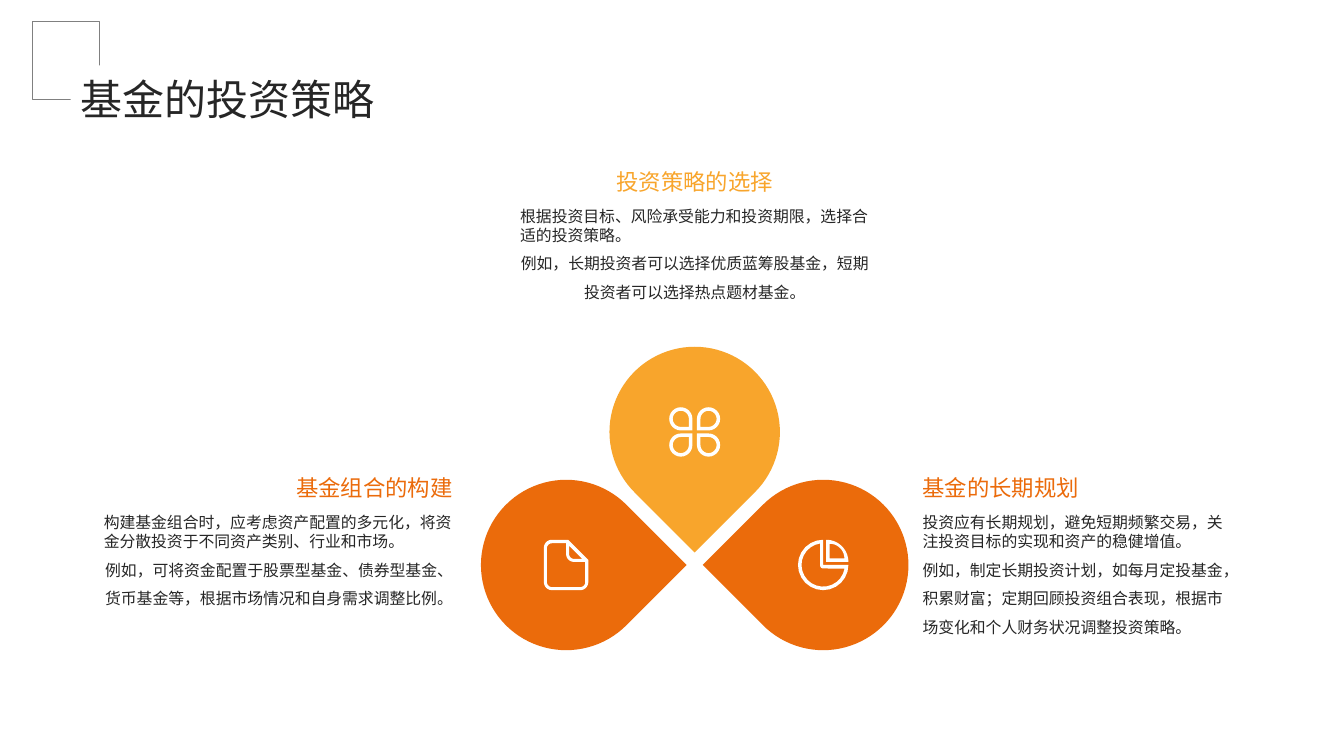
from math import cos, radians, sin

from lxml import etree
from pptx import Presentation
from pptx import util as u
from pptx.dml.color import RGBColor
from pptx.enum import shapes, text
from pptx.oxml.ns import qn

FONT = "Noto Sans CJK SC"
INK, WHITE, GREY = "262626", "FFFFFF", "808080"
AMBER, ORANGE = "F8A52C", "EB6B0B"
LEFT, CENTER, RIGHT = text.PP_ALIGN.LEFT, text.PP_ALIGN.CENTER, text.PP_ALIGN.RIGHT

TITLE = "基金的投资策略"
STRATEGIES = [
    dict(heading="投资策略的选择", color=AMBER, align=CENTER, icon="petals",
         column=0, row=0, turn=135, box=(5.16, 1.3, 3.46),
         body=["根据投资目标、风险承受能力和投资期限，选择合适的投资策略。",
               "例如，长期投资者可以选择优质蓝筹股基金，短期投资者可以选择热点题材基金。"]),
    dict(heading="基金的长期规划", color=ORANGE, align=LEFT, icon="pie",
         column=1, row=1, turn=225, box=(9.15, 4.34, 3.13),
         body=["投资应有长期规划，避免短期频繁交易，关注投资目标的实现和资产的稳健增值。",
               "例如，制定长期投资计划，如每月定投基金，积累财富；定期回顾投资组合表现，根据市场变化和个人财务状况调整投资策略。"]),
    dict(heading="基金组合的构建", color=ORANGE, align=RIGHT, icon="page",
         column=-1, row=1, turn=45, box=(1.03, 4.34, 3.46),
         body=["构建基金组合时，应考虑资产配置的多元化，将资金分散投资于不同资产类别、行业和市场。",
               "例如，可将资金配置于股票型基金、债券型基金、货币基金等，根据市场情况和自身需求调整比例。"]),
]

DROP = 1.69
TOP_X, TOP_Y = 6.89, 4.285
STEP_X, STEP_Y = 1.275, 1.32
HEADING_H, BODY_DY, BODY_H = 0.63, 0.75, 1.31


def rgb(color):
    return RGBColor.from_string(color)


def arc(cx, cy, r, start, end, steps=18):
    angles = [radians(start + (end - start) * i / steps) for i in range(steps + 1)]
    return [(cx + r * cos(a), cy + r * sin(a)) for a in angles]


def petal(sx, sy, r):
    outline = arc(0, 0, r, 90, 360) + [(r, r)]
    return [(sx * (x - 13.75), sy * (y - 13)) for x, y in outline]


ICONS = {
    "petals": [petal(sx, sy, r) for sx in (1, -1) for sy in (1, -1) for r in (11.5, 8)],
    "pie": [
        [(0, 0)] + arc(0, 0, 25, 0, 270),
        arc(0, 0, 21.5, 262, 10) + arc(0, 0.5, 3, 90, 180),
        [(3, -3)] + arc(3, -3, 22, 270, 360),
        [(6.5, -6.5)] + arc(6.5, -6.5, 14.5, 270, 360),
    ],
    "page": [
        [(2, -25), (22, -5)] + arc(14, 17, 8, 0, 90)
        + arc(-14, 17, 8, 90, 180) + arc(-14, -17, 8, 180, 270),
        [(0, -21.5)] + arc(8, -11, 8, 180, 90) + [(19, -3)] + arc(14, 17, 5, 0, 90)
        + arc(-14, 17, 5, 90, 180) + arc(-14, -16.5, 5, 180, 270),
        [(3, -19), (16, -6)] + arc(8, -11, 5, 90, 180),
    ],
}


def paint(sp, fill=None, line=None):
    sp.shadow.inherit = False
    if fill:
        sp.fill.solid()
        sp.fill.fore_color.rgb = rgb(fill)
    else:
        sp.fill.background()
    if line:
        sp.line.color.rgb = rgb(line)
        sp.line.width = u.Pt(0.75)
    else:
        sp.line.fill.background()


def add_preset(s, kind, x, y, w, h, fill=None, line=None):
    sp = s.shapes.add_shape(kind, *map(u.Inches, (x, y, w, h)))
    paint(sp, fill, line)
    return sp


def add_icon(s, contours, cx, cy):
    placed = [[(u.Inches(cx + x / 100), u.Inches(cy + y / 100)) for x, y in c]
              for c in contours]
    builder = s.shapes.build_freeform(*placed[0][0])
    for i, points in enumerate(placed):
        if i:
            builder.move_to(*points[0])
        builder.add_line_segments(points[1:], close=True)
    paint(builder.convert_to_shape(), WHITE)


def add_text(s, x, y, w, h, paragraphs, size, color, anchor=text.MSO_ANCHOR.TOP):
    tf = s.shapes.add_textbox(*map(u.Inches, (x, y, w, h))).text_frame
    tf.margin_left = tf.margin_right = tf.margin_top = tf.margin_bottom = 0
    tf.word_wrap = True
    tf.vertical_anchor = anchor
    for i, (words, align, spacing) in enumerate(paragraphs):
        p = tf.add_paragraph() if i else tf.paragraphs[0]
        p.text, p.alignment, p.line_spacing = words, align, spacing
        r = p.runs[0]
        r.font.size = u.Pt(size)
        r.font.color.rgb = rgb(color)
        r.font.name = FONT
        etree.SubElement(r.font._element, qn("a:ea"), typeface=FONT)
    return tf


def main():
    prs = Presentation()
    prs.slide_width, prs.slide_height = u.Inches(13.33), u.Inches(7.5)
    s = prs.slides.add_slide(prs.slide_layouts[6])

    for item in STRATEGIES:
        cx = TOP_X + item["column"] * STEP_X
        cy = TOP_Y + item["row"] * STEP_Y
        drop = add_preset(s, shapes.MSO_SHAPE.TEAR, cx - DROP / 2, cy - DROP / 2,
                          DROP, DROP, item["color"])
        drop.rotation = item["turn"]
        add_icon(s, ICONS[item["icon"]], cx, cy)

        x, y, w = item["box"]
        lead, example = item["body"]
        add_text(s, x, y + BODY_DY, w, BODY_H,
                 [(lead, LEFT, 1.0), (example, item["align"], 1.5)], 11.3, INK)
        add_text(s, x, y, w, HEADING_H, [(item["heading"], item["align"], 1.3)],
                 16, item["color"], text.MSO_ANCHOR.BOTTOM)

    add_preset(s, shapes.MSO_SHAPE.RECTANGLE, 0.32, 0.21, 0.67, 0.78, line=GREY)
    add_preset(s, shapes.MSO_SHAPE.RECTANGLE, 0.7, 0.65, 0.61, 0.5, fill=WHITE)
    tf = add_text(s, 0.8, 0.68, 11.1, 0.46, [(TITLE, LEFT, 1.1)], 30, INK)
    tf.auto_size = text.MSO_AUTO_SIZE.SHAPE_TO_FIT_TEXT

    prs.save("out.pptx")


if __name__ == "__main__":
    main()
